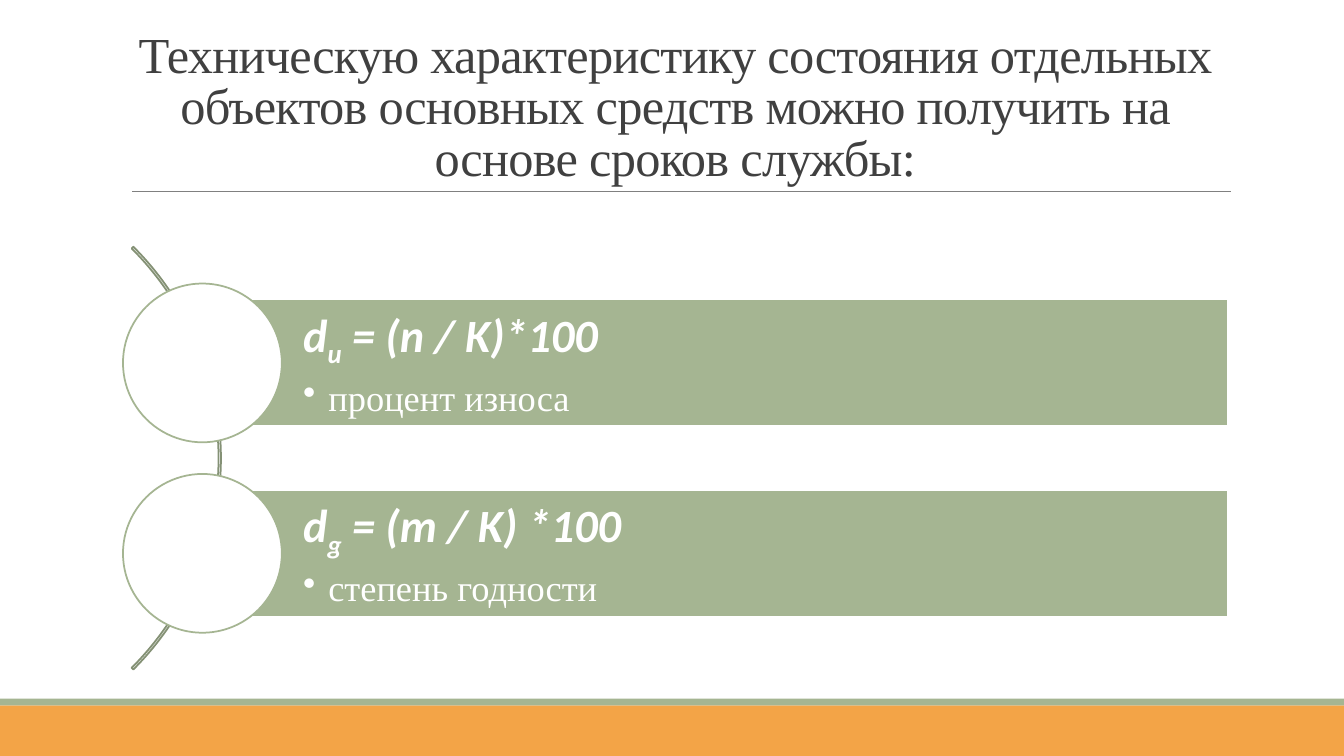
import pptx
import pptx.dml.color
import pptx.enum.shapes
import pptx.enum.text
import pptx.oxml
import pptx.oxml.ns
import pptx.util

Pt = pptx.util.Pt
Inches = pptx.util.Inches
SHAPE = pptx.enum.shapes.MSO_SHAPE
ALIGN = pptx.enum.text.PP_ALIGN
ANCHOR = pptx.enum.text.MSO_ANCHOR
rgb = pptx.dml.color.RGBColor.from_string

GREEN, ORANGE, WHITE = "A5B592", "F3A447", "FFFFFF"

prs = pptx.Presentation()
prs.slide_width, prs.slide_height = Inches(13.33), Inches(7.5)
COL, ROW = prs.slide_width / 100, prs.slide_height / 100
s = prs.slides.add_slide(prs.slide_layouts[5])


def add_block(kind, left, top, width, height, fill=None, line=None):
    sp = s.shapes.add_shape(kind, int(left), int(top), int(width), int(height))
    sp.shadow.inherit = False
    if fill:
        sp.fill.solid()
        sp.fill.fore_color.rgb = rgb(fill)
    else:
        sp.fill.background()
    if line:
        sp.line.color.rgb = rgb(line)
        sp.line.width = Pt(1.25)
    else:
        sp.line.fill.background()
    return sp


def add_run(p, text, size, font, color=WHITE, strong=False, **attrs):
    """Add a run; strong is bold italic, attrs are raw run attributes."""
    r = p.add_run()
    r.text = text
    r.font.size, r.font.name, r.font.color.rgb = Pt(size), font, rgb(color)
    r.font.bold = r.font.italic = strong
    for name, value in attrs.items():
        r._r.get_or_add_rPr().set(name, str(value))


# Footer bands and the rule under the title
add_block(SHAPE.RECTANGLE, 0, 93.3 * ROW, 100 * COL, 6.7 * ROW, ORANGE)
add_block(SHAPE.RECTANGLE, 0, 92.4 * ROW, 100 * COL, 0.9 * ROW, GREEN)
rule_y = int(25.33 * ROW)
rule = s.shapes.add_connector(pptx.enum.shapes.MSO_CONNECTOR.STRAIGHT,
                              int(9.83 * COL), rule_y, int(91.6 * COL), rule_y)
rule.line.color.rgb = rgb("808080")
rule.line.width = Pt(0.5)
rule._element.spPr.append(pptx.oxml.parse_xml(
    f"<a:effectLst {pptx.oxml.ns.nsdecls('a')}/>"))

title = s.shapes.title
title.left, title.top = int(9 * COL), int(4.13 * ROW)
title.width, title.height = int(82.5 * COL), int(21.2 * ROW)
tf = title.text_frame
tf.word_wrap = True
tf.auto_size = pptx.enum.text.MSO_AUTO_SIZE.NONE
tf.vertical_anchor = ANCHOR.BOTTOM
p = tf.paragraphs[0]
p.alignment, p.line_spacing = ALIGN.CENTER, 0.85
add_run(p, "Техническую характеристику состояния отдельных объектов основных "
        "средств можно получить на основе сроков службы:",
        36, "Times New Roman", "404040", spc=-50)

# Formula list: bars on a curve, each starting at the centre of its circle
BAR = 16.8 * ROW
CIRCLE, PITCH, ARC = BAR / 0.8, BAR * 1.5, 79.07 * ROW
MIDDLE = 60.6 * ROW
CIRCLE_LEFT, BAR_RIGHT = 9.15 * COL, 91.37 * COL
BAR_LEFT = CIRCLE_LEFT + CIRCLE / 2

arc = add_block(SHAPE.BLOCK_ARC, -28.05 * COL, MIDDLE - ARC / 2, ARC, ARC,
                line="849175")
for i, value in enumerate((189, 27, 0.004)):
    arc.adjustments[i] = value

formulas = [("и", " = (n / K)*100", "процент износа"),
            ("g", " = (m / K) *100", "степень годности")]
for i, (index, formula, meaning) in enumerate(formulas):
    center = MIDDLE + (i - 0.5) * PITCH
    bar = add_block(SHAPE.RECTANGLE, BAR_LEFT, center - BAR / 2,
                    BAR_RIGHT - BAR_LEFT, BAR, GREEN, WHITE)
    tf = bar.text_frame
    tf.word_wrap = True
    tf.vertical_anchor = ANCHOR.MIDDLE
    tf.margin_left = Inches(1)
    tf.margin_top = tf.margin_right = tf.margin_bottom = Inches(0.09)

    p = tf.paragraphs[0]
    p.alignment, p.line_spacing, p.space_after = ALIGN.LEFT, 0.9, Pt(11.5)
    for text, baseline in (("d", 0), (index, -25000), (formula, 0)):
        add_run(p, text, 33, "Calibri", strong=True, baseline=baseline)

    p = tf.add_paragraph()
    p.level = 1
    p.alignment, p.line_spacing, p.space_after = ALIGN.LEFT, 0.9, Pt(4)
    add_run(p, meaning, 26, "Times New Roman")
    pPr = p._p.get_or_add_pPr()
    pPr.set("marL", str(Inches(0.25)))
    pPr.set("indent", str(Inches(-0.25)))
    pPr.append(pptx.oxml.parse_xml(
        f"<a:buChar {pptx.oxml.ns.nsdecls('a')} char='•'/>"))

    add_block(SHAPE.OVAL, CIRCLE_LEFT, center - CIRCLE / 2, CIRCLE, CIRCLE,
              WHITE, GREEN)

prs.save("out.pptx")
